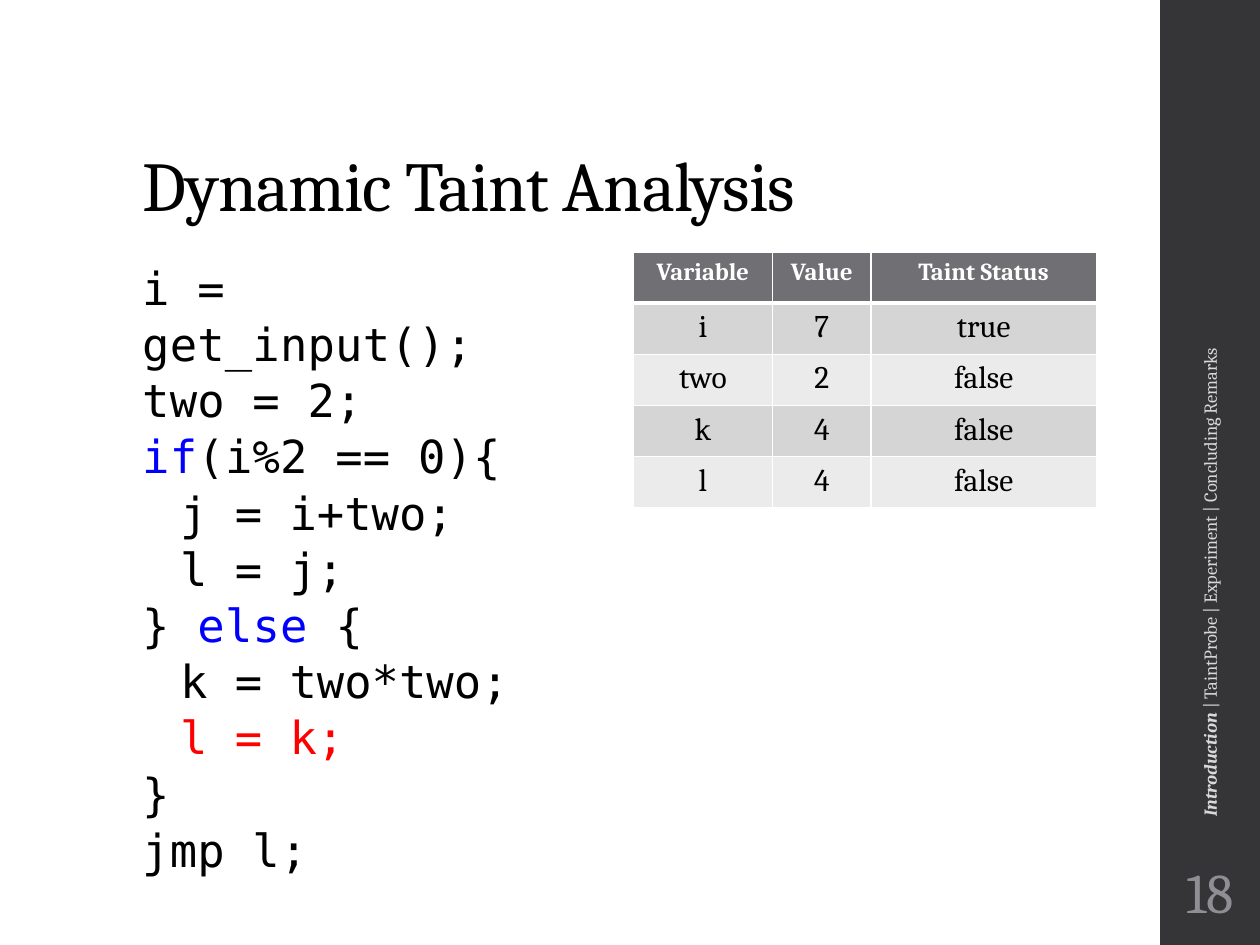
from lxml.etree import SubElement
from pptx import Presentation
from pptx.dml.color import RGBColor
from pptx.enum.shapes import MSO_SHAPE
from pptx.enum.text import MSO_ANCHOR, PP_ALIGN
from pptx.oxml.ns import qn
from pptx.util import Pt

BLACK = RGBColor(0, 0, 0)
WHITE = RGBColor(255, 255, 255)
BLUE = RGBColor(0, 0, 255)
RED = RGBColor(255, 0, 0)
SIDEBAR = RGBColor(0x35, 0x35, 0x37)
SECTION = RGBColor(0xD9, 0xD9, 0xDB)
NUMBER = RGBColor(0x8E, 0x8E, 0x94)
HEADER = RGBColor(0x6F, 0x6F, 0x74)
BANDS = (RGBColor(0xD5, 0xD5, 0xD6), RGBColor(0xEB, 0xEB, 0xEB))
SERIF = "Cambria"
MONO = "DejaVu Sans Mono"

TITLE = "Dynamic Taint Analysis"
CODE = [
    (0, [("i = get_input();", BLACK)]),
    (0, [("two = 2;", BLACK)]),
    (0, [("if", BLUE), ("(i%2 == 0){", BLACK)]),
    (1, [("j = i+two;", BLACK)]),
    (1, [("l = j;", BLACK)]),
    (0, [("} ", BLACK), ("else", BLUE), (" {", BLACK)]),
    (1, [("k = two*two;", BLACK)]),
    (1, [("l = k;", RED)]),
    (0, [("}", BLACK)]),
    (0, [("jmp l;", BLACK)]),
]
VARIABLES = [
    ("Variable", "Value", "Taint Status"),
    ("i", "7", "true"),
    ("two", "2", "false"),
    ("k", "4", "false"),
    ("l", "4", "false"),
]
COLUMN_WIDTHS = (79.7, 56.2, 128.9)
ROW_HEIGHT = 29.25
CURRENT_SECTION = "Introduction"
OTHER_SECTIONS = " | TaintProbe | Experiment | Concluding Remarks"
SLIDE_NUMBER = "18"


def add_run(paragraph, text, size, color, font=SERIF, bold=False, italic=False, spacing=0):
    run = paragraph.add_run()
    run.text = text
    run.font.size = Pt(size)
    run.font.name = font
    run.font.bold = bold
    run.font.italic = italic
    run.font.color.rgb = color
    if spacing:
        run.font._element.set("spc", str(round(spacing * 100)))


def add_text_frame(slide, left, top, width, height, anchor=MSO_ANCHOR.TOP, rotation=0):
    box = slide.shapes.add_textbox(Pt(left), Pt(top), Pt(width), Pt(height))
    box.rotation = rotation
    frame = box.text_frame
    frame.word_wrap = True
    frame.vertical_anchor = anchor
    return frame


def set_borders(cell, bottom_width):
    properties = cell._tc.get_or_add_tcPr()
    widths = {"a:lnL": 1, "a:lnR": 1, "a:lnT": 1, "a:lnB": bottom_width}
    for position, (tag, width) in enumerate(widths.items()):
        line = SubElement(properties, qn(tag), w=str(Pt(width)))
        fill = SubElement(line, qn("a:solidFill"))
        SubElement(fill, qn("a:srgbClr"), val=str(WHITE))
        properties.insert(position, line)


def add_title(slide):
    title = slide.shapes.title
    title.left, title.top, title.width, title.height = Pt(74.2), Pt(28.8), Pt(572.4), Pt(104.4)
    title.text_frame.vertical_anchor = MSO_ANCHOR.BOTTOM
    heading = title.text_frame.paragraphs[0]
    heading.alignment = PP_ALIGN.LEFT
    heading.line_spacing = 0.9
    add_run(heading, TITLE, 40, BLACK, spacing=-0.5)


def add_code(slide):
    listing = add_text_frame(slide, 74.2, 144, 264.2, 342.7)
    for index, (level, pieces) in enumerate(CODE):
        line = listing.add_paragraph() if index else listing.paragraphs[0]
        line.line_spacing = 1.03
        line.level = level
        line._p.get_or_add_pPr().set("marL", str(Pt(21.6 * level)))
        for text, color in pieces:
            add_run(line, text, 26, color, MONO, spacing=0 if level else 0.1)


def add_variables(slide):
    row_count = len(VARIABLES)
    variables = slide.shapes.add_table(
        row_count, len(COLUMN_WIDTHS), Pt(361.8), Pt(144),
        Pt(sum(COLUMN_WIDTHS)), Pt(ROW_HEIGHT * row_count)).table
    for column, width in zip(variables.columns, COLUMN_WIDTHS):
        column.width = Pt(width)
    for row_index, values in enumerate(VARIABLES):
        variables.rows[row_index].height = Pt(ROW_HEIGHT)
        is_header = row_index == 0
        for column_index, value in enumerate(values):
            cell = variables.cell(row_index, column_index)
            cell.fill.solid()
            cell.fill.fore_color.rgb = HEADER if is_header else BANDS[(row_index - 1) % 2]
            set_borders(cell, 3 if is_header else 1)
            entry = cell.text_frame.paragraphs[0]
            entry.alignment = PP_ALIGN.CENTER
            add_run(entry, value, 14 if is_header else 18,
                    WHITE if is_header else BLACK, bold=is_header)


def add_sidebar(slide):
    sidebar = slide.shapes.add_shape(MSO_SHAPE.RECTANGLE, Pt(663), 0, Pt(57), Pt(540))
    sidebar.shadow.inherit = False
    sidebar.fill.solid()
    sidebar.fill.fore_color.rgb = SIDEBAR
    sidebar.line.fill.background()

    sections = add_text_frame(slide, 468.7, 240.5, 445, 21.6, MSO_ANCHOR.MIDDLE, 270).paragraphs[0]
    add_run(sections, CURRENT_SECTION, 10.5, SECTION, bold=True, italic=True)
    add_run(sections, OTHER_SECTIONS, 10.5, SECTION)

    number_frame = add_text_frame(slide, 664.6, 486, 54, 46.8, MSO_ANCHOR.MIDDLE)
    number_frame.margin_left = number_frame.margin_right = Pt(2.2)
    number = number_frame.paragraphs[0]
    number.alignment = PP_ALIGN.CENTER
    add_run(number, SLIDE_NUMBER, 32, NUMBER)


def main():
    deck = Presentation()
    deck.slide_width, deck.slide_height = Pt(720), Pt(540)
    slide = deck.slides.add_slide(deck.slide_layouts[5])
    add_title(slide)
    add_code(slide)
    add_variables(slide)
    add_sidebar(slide)
    deck.save("out.pptx")


if __name__ == "__main__":
    main()
